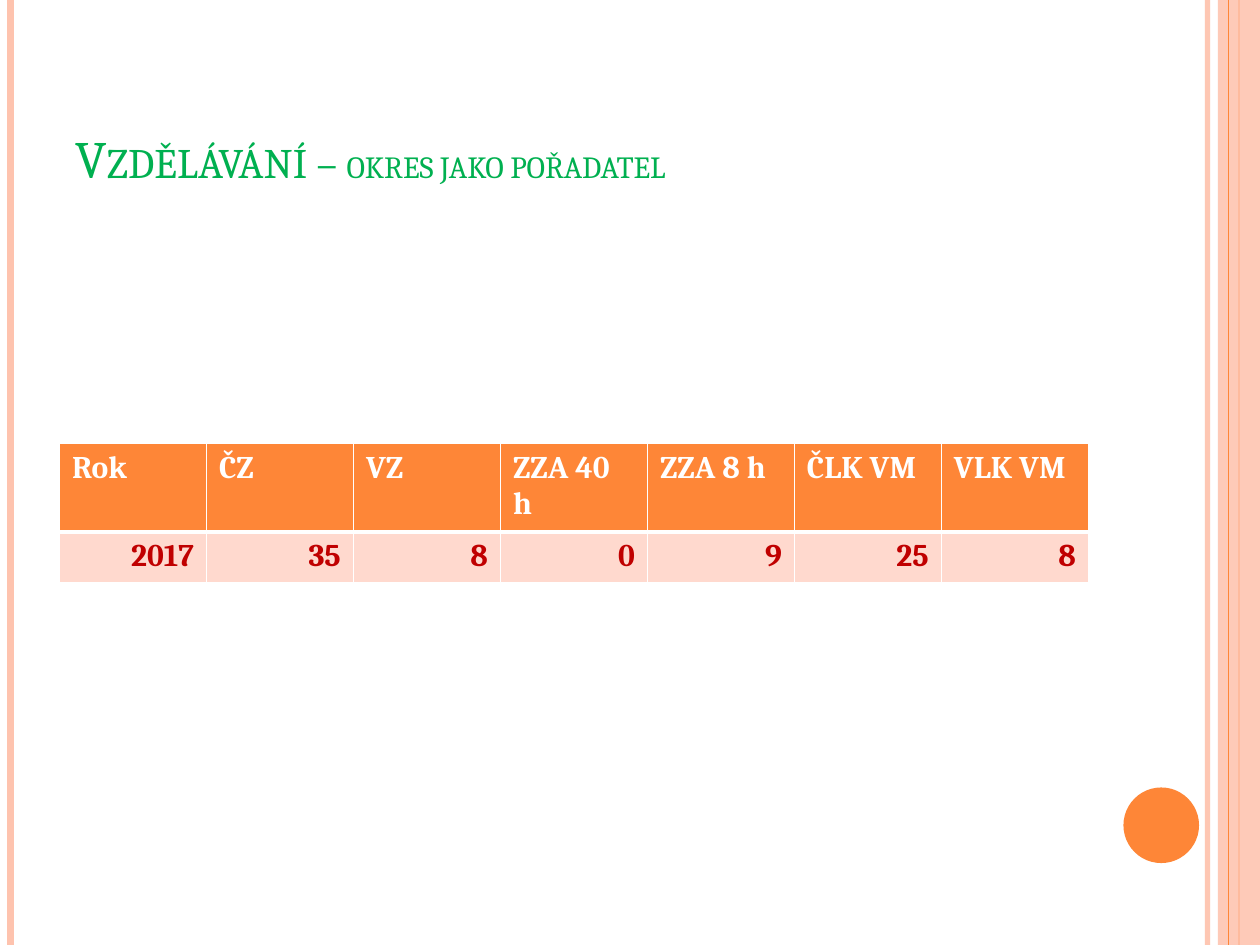
from dataclasses import dataclass

from lxml import etree
from pptx import Presentation
from pptx import util as u
from pptx.dml.color import RGBColor
from pptx.enum import shapes, text
from pptx.oxml.ns import qn

Pt = u.Pt
W, H = 720, 540


@dataclass(frozen=True)
class Theme:
    font: str = "Cambria"
    accent: str = "FE8637"
    soft: str = "FEC3AE"
    band: str = "FFD9CE"
    title: str = "00B050"
    value: str = "C00000"
    white: str = "FFFFFF"
    title_size: int = 30
    subtitle_size: int = 22
    table_size: int = 18


def rgb(color):
    return RGBColor.from_string(color)


def set_alpha(fill_parent, percent):
    clr = fill_parent.find(".//" + qn("a:srgbClr"))
    etree.SubElement(clr, qn("a:alpha")).set("val", str(percent * 1000))


class Builder:
    def __init__(self, slide, theme):
        self.s = slide
        self.t = theme

    def rule(self, x, color, width, alpha=100):
        """Vertical line over the full height of the slide."""
        c = self.s.shapes.add_connector(
            shapes.MSO_CONNECTOR.STRAIGHT, Pt(x), Pt(0), Pt(x), Pt(H))
        c.line.color.rgb = rgb(color)
        c.line.width = Pt(width)
        if alpha < 100:
            set_alpha(c.line._get_or_add_ln(), alpha)
        etree.SubElement(c._element.spPr, qn("a:effectLst"))

    def shape(self, kind, x, y, w, h, color, alpha=100):
        sp = self.s.shapes.add_shape(kind, Pt(x), Pt(y), Pt(w), Pt(h))
        sp.shadow.inherit = False
        sp.fill.solid()
        sp.fill.fore_color.rgb = rgb(color)
        if alpha < 100:
            set_alpha(sp._element.spPr, alpha)
        sp.line.fill.background()

    def title(self, x, y, w, h, parts):
        tf = self.s.shapes.add_textbox(Pt(x), Pt(y), Pt(w), Pt(h)).text_frame
        tf.word_wrap = True
        tf.vertical_anchor = text.MSO_ANCHOR.BOTTOM
        p = tf.paragraphs[0]
        p.font.name = self.t.font
        p.font.color.rgb = rgb(self.t.title)
        for words, size in parts:
            r = p.add_run()
            r.text = words
            r.font.size = Pt(size)
            r._r.get_or_add_rPr().set("cap", "small")

    def borders(self, cell, widths):
        tc_pr = cell._tc.get_or_add_tcPr()
        for side, width in zip("LRTB", widths):
            ln = etree.SubElement(tc_pr, qn("a:ln" + side), w=str(Pt(width)))
            fill = etree.SubElement(ln, qn("a:solidFill"))
            etree.SubElement(fill, qn("a:srgbClr"), val=self.t.white)

    def table(self, x, y, col_width, row_heights, rows):
        n = len(rows[0])
        tbl = self.s.shapes.add_table(
            len(rows), n, Pt(x), Pt(y),
            Pt(col_width * n), Pt(sum(row_heights))).table
        for col in tbl.columns:
            col.width = Pt(col_width)
        for i, (row, height) in enumerate(zip(rows, row_heights)):
            tbl.rows[i].height = Pt(height)
            header = i == 0
            for j, value in enumerate(row):
                cell = tbl.cell(i, j)
                self.borders(cell, (1, 1, 1, 3) if header else (1, 1, 3, 1))
                cell.fill.solid()
                cell.fill.fore_color.rgb = rgb(
                    self.t.accent if header else self.t.band)
                cell.text = value
                p = cell.text_frame.paragraphs[0]
                p.alignment = (text.PP_ALIGN.LEFT if header
                               else text.PP_ALIGN.RIGHT)
                p.font.name = self.t.font
                p.font.size = Pt(self.t.table_size)
                p.font.bold = True
                p.font.color.rgb = rgb(
                    self.t.white if header else self.t.value)


def main():
    prs = Presentation()
    prs.slide_width, prs.slide_height = Pt(W), Pt(H)
    t = Theme()
    b = Builder(prs.slides.add_slide(prs.slide_layouts[6]), t)

    # Side stripes and the circle
    b.rule(690, t.soft, 3, alpha=93)
    b.rule(6, t.soft, 4.5)
    b.rule(708, t.accent, 1.5)
    b.shape(shapes.MSO_SHAPE.RECTANGLE, 696, 0, 24, H, t.soft, alpha=87)
    b.rule(702, t.accent, 0.75)
    b.shape(shapes.MSO_SHAPE.OVAL, 642, 450, 43.2, 43.2, t.accent)

    # Title
    b.title(36, 21.6, 616, 90, [
        ("Vzdělávání – ", t.title_size),
        ("okres jako pořadatel", t.subtitle_size),
    ])

    # Course counts
    b.table(34, 253.5, 84, (48, 29.2), [
        ("Rok", "ČZ", "VZ", "ZZA 40 h", "ZZA 8 h", "ČLK VM", "VLK VM"),
        ("2017", "35", "8", "0", "9", "25", "8"),
    ])

    prs.save("out.pptx")


if __name__ == "__main__":
    main()
